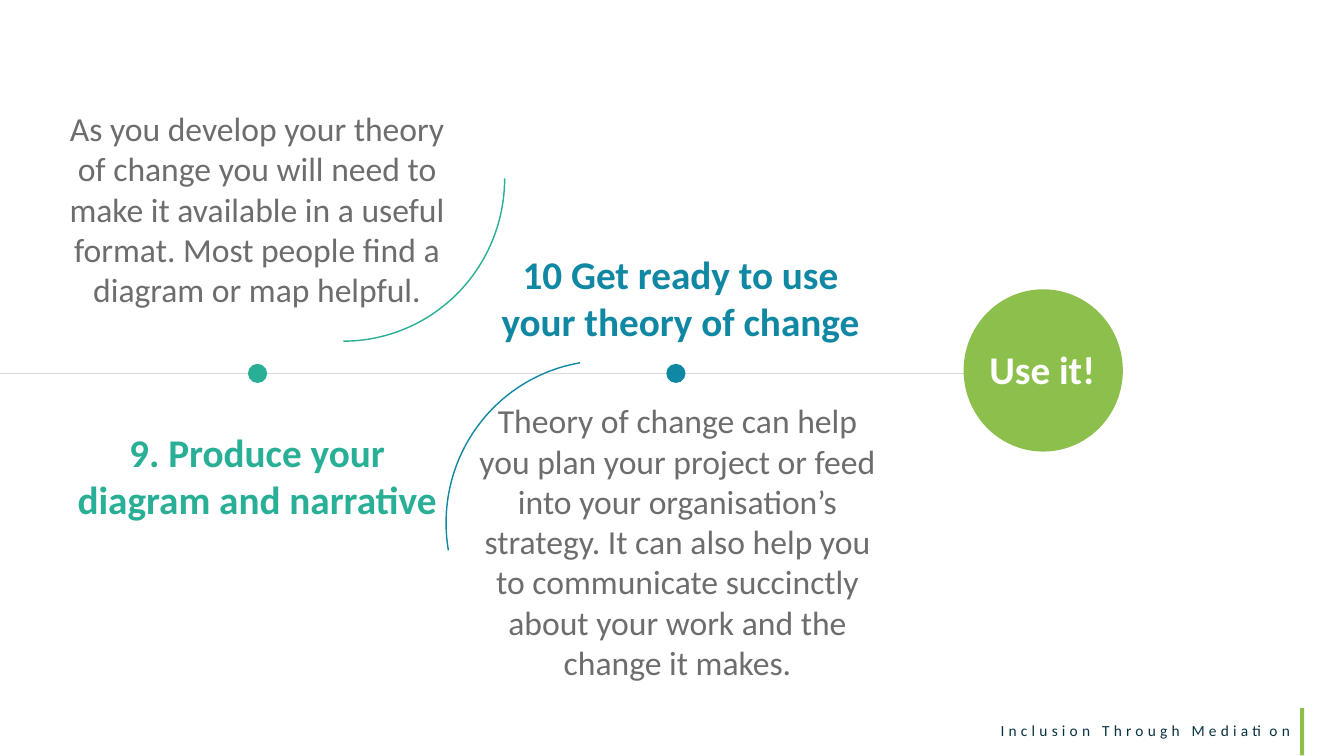
import pptx
import pptx.util
import pptx.dml.color
import pptx.enum.shapes
import pptx.enum.text
import pptx.oxml.ns
import lxml.etree

COLOURS = {
    "green": "8CBF4B",
    "teal": "28AF95",
    "blue": "1188A3",
    "navy": "08313F",
    "grey": "6D6E6C",
    "rule": "D9D9D9",
    "white": "FFFFFF",
}
FONT = "Calibri"
SHAPES = pptx.enum.shapes.MSO_SHAPE
ALIGN = pptx.enum.text.PP_ALIGN
ANCHOR = pptx.enum.text.MSO_ANCHOR
AUTO_SIZE = pptx.enum.text.MSO_AUTO_SIZE


def colour(name):
    return pptx.dml.color.RGBColor.from_string(COLOURS[name])


def write_text(shape, text, size=24, color="grey", bold=False, align=ALIGN.CENTER,
               anchor=ANCHOR.TOP, auto_size=AUTO_SIZE.SHAPE_TO_FIT_TEXT,
               line_spacing=1.0, tracking=None):
    frame = shape.text_frame
    frame.word_wrap = True
    frame.auto_size = auto_size
    frame.vertical_anchor = anchor
    paragraph = frame.paragraphs[0]
    paragraph.alignment = align
    paragraph.line_spacing = line_spacing
    paragraph.space_before = pptx.util.Pt(0)
    run = paragraph.add_run()
    run.text = text
    run.font.name = FONT
    run.font.size = pptx.util.Pt(size)
    run.font.bold = bold
    run.font.color.rgb = colour(color)
    if tracking:
        run.font._element.set("spc", str(tracking * 100))


class TimelineSlide:
    def __init__(self, presentation):
        self.width = presentation.slide_width
        self.height = presentation.slide_height
        self.slide = presentation.slides.add_slide(presentation.slide_layouts[2])
        title = self.slide.shapes.title
        title._element.getparent().remove(title._element)

    def across(self, percent):
        return round(self.width * percent / 100)

    def down(self, percent):
        return round(self.height * percent / 100)

    def box(self, left, top, width, height):
        return self.across(left), self.down(top), self.across(width), self.down(height)

    def rule(self, left, right, top, color, weight):
        connector = self.slide.shapes.add_connector(
            pptx.enum.shapes.MSO_CONNECTOR.STRAIGHT,
            self.across(right), self.down(top), self.across(left), self.down(top))
        connector.line.color.rgb = colour(color)
        connector.line.width = pptx.util.Pt(weight)
        lxml.etree.SubElement(connector._element.spPr, pptx.oxml.ns.qn("a:effectLst"))

    def filled(self, kind, bounds, color):
        shape = self.slide.shapes.add_shape(kind, *self.box(*bounds))
        shape.shadow.inherit = False
        shape.fill.solid()
        shape.fill.fore_color.rgb = colour(color)
        shape.line.fill.background()

    def dot(self, left, color):
        self.filled(SHAPES.OVAL, (left, 48.13, 1.43, 2.53), color)

    def arc(self, left, top, rotation, color):
        shape = self.slide.shapes.add_shape(SHAPES.ARC, *self.box(left, top, 24.23, 42.67))
        shape.shadow.inherit = False
        shape.rotation = rotation
        shape.fill.background()
        shape.line.color.rgb = colour(color)
        shape.line.width = pptx.util.Pt(1)

    def text(self, text, bounds, **style):
        write_text(self.slide.shapes.add_textbox(*self.box(*bounds)), text, **style)

    def heading(self, text, left, top, color):
        self.text(text, (left, top, 28.95, 13.87), size=28, color=color, bold=True)

    def body(self, text, bounds, **style):
        placeholder = self.slide.placeholders[1]
        placeholder.left, placeholder.top, placeholder.width, placeholder.height = self.box(*bounds)
        self.slide.shapes._spTree.append(placeholder._element)
        write_text(placeholder, text, **style)


def main():
    presentation = pptx.Presentation()
    presentation.slide_width = pptx.util.Inches(13.33)
    presentation.slide_height = pptx.util.Inches(7.5)
    timeline = TimelineSlide(presentation)

    timeline.rule(0, 77.7, 49.33, "rule", 0.5)
    timeline.filled(SHAPES.OVAL, (71.7, 38.27, 11.85, 21.47), "green")
    timeline.dot(49.58, "blue")
    timeline.text("Inclusion Through Mediation", (3, 94.67, 93.75, 3.87),
                  size=11, color="navy", align=ALIGN.RIGHT, tracking=3)
    timeline.filled(SHAPES.RECTANGLE, (96.73, 93.67, 0.3, 6.27), "green")
    timeline.dot(18.45, "teal")
    timeline.body("Use it!", (71.55, 35.2, 12, 27.87), size=28, color="white", bold=True,
                  anchor=ANCHOR.MIDDLE, auto_size=AUTO_SIZE.NONE, line_spacing=0.9)

    timeline.arc(13.43, 2.27, 90, "teal")
    timeline.heading("10 Get ready to use your theory of change", 36.15, 32.4, "blue")
    timeline.text(
        "As you develop your theory of change you will need to make it available in a "
        "useful format. Most people find a diagram or map helpful.",
        (3.6, 13.6, 31.05, 28.27))
    timeline.heading("9. Produce your diagram and narrative", 4.65, 56, "teal")
    timeline.text(
        "Theory of change can help you plan your project or feed into your organisation’s "
        "strategy. It can also help you to communicate succinctly about your work and the "
        "change it makes.",
        (34.88, 52.27, 31.05, 39.07))
    timeline.arc(33.08, 47.87, 260.3, "blue")

    presentation.save("out.pptx")


if __name__ == "__main__":
    main()
